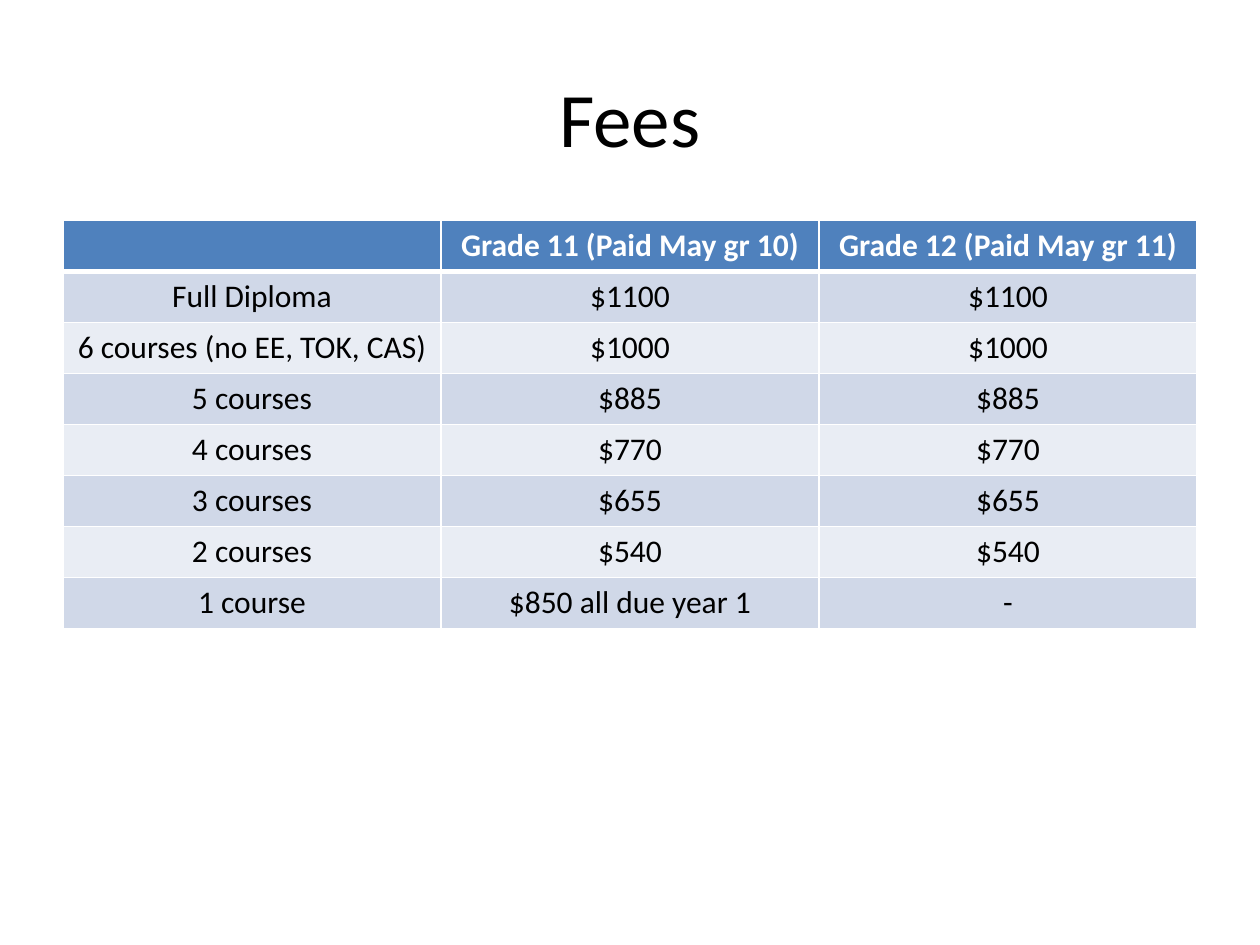
from lxml.etree import SubElement
from pptx import Presentation
from pptx.dml.color import RGBColor
from pptx.enum.text import MSO_ANCHOR, PP_ALIGN
from pptx.oxml.ns import qn
from pptx.util import Inches, Pt

TITLE = "Fees"
FEES = [
    ("", "Grade 11 (Paid May gr 10)", "Grade 12 (Paid May gr 11)"),
    ("Full Diploma", "$1100", "$1100"),
    ("6 courses (no EE, TOK, CAS)", "$1000", "$1000"),
    ("5 courses", "$885", "$885"),
    ("4 courses", "$770", "$770"),
    ("3 courses", "$655", "$655"),
    ("2 courses", "$540", "$540"),
    ("1 course", "$850 all due year 1", "-"),
]

COLORS = {
    "header": "4F81BD",
    "odd": "D0D8E8",
    "even": "E9EDF4",
    "text": "000000",
    "white": "FFFFFF",
}
FONT = "Calibri"
MARGIN, CONTENT_WIDTH = 0.5, 9
TABLE_TOP, ROW_HEIGHT = 1.75, 0.405


def color(key):
    return RGBColor.from_string(COLORS[key])


def write(frame, text, size, color_key, bold=False):
    paragraph = frame.paragraphs[0]
    paragraph.alignment = PP_ALIGN.CENTER
    if not text:
        paragraph.font.size = Pt(size)
        return
    run = paragraph.add_run()
    run.text = text
    run.font.name = FONT
    run.font.size = Pt(size)
    run.font.bold = bold
    run.font.color.rgb = color(color_key)


def add_borders(cell, widths):
    """Draw white borders; call before filling, as lines precede the fill in XML."""
    properties = cell._tc.get_or_add_tcPr()
    for side, width in widths.items():
        line = SubElement(properties, qn(f"a:ln{side}"), w=str(Pt(width)))
        fill = SubElement(line, qn("a:solidFill"))
        SubElement(fill, qn("a:srgbClr"), val=COLORS["white"])


def add_title(slide):
    box = slide.shapes.add_textbox(
        Inches(MARGIN), Inches(0.3), Inches(CONTENT_WIDTH), Inches(1.25))
    frame = box.text_frame
    frame.word_wrap = True
    frame.vertical_anchor = MSO_ANCHOR.MIDDLE
    write(frame, TITLE, 44, "text")


def add_fee_table(slide):
    table = slide.shapes.add_table(
        len(FEES), len(FEES[0]), Inches(MARGIN), Inches(TABLE_TOP),
        Inches(CONTENT_WIDTH), Inches(ROW_HEIGHT * len(FEES))).table
    for row, labels in enumerate(FEES):
        is_header = row == 0
        band = "header" if is_header else "odd" if row % 2 else "even"
        widths = {"L": 1, "R": 1,
                  "T": 3 if row == 1 else 1,
                  "B": 3 if is_header else 1}
        for column, label in enumerate(labels):
            cell = table.cell(row, column)
            add_borders(cell, widths)
            cell.fill.solid()
            cell.fill.fore_color.rgb = color(band)
            write(cell.text_frame, label, 18,
                  "white" if is_header else "text", bold=is_header)


def main():
    deck = Presentation()
    deck.slide_width, deck.slide_height = Inches(10), Inches(7.5)
    slide = deck.slides.add_slide(deck.slide_layouts[6])
    add_title(slide)
    add_fee_table(slide)
    deck.save("out.pptx")


if __name__ == "__main__":
    main()
